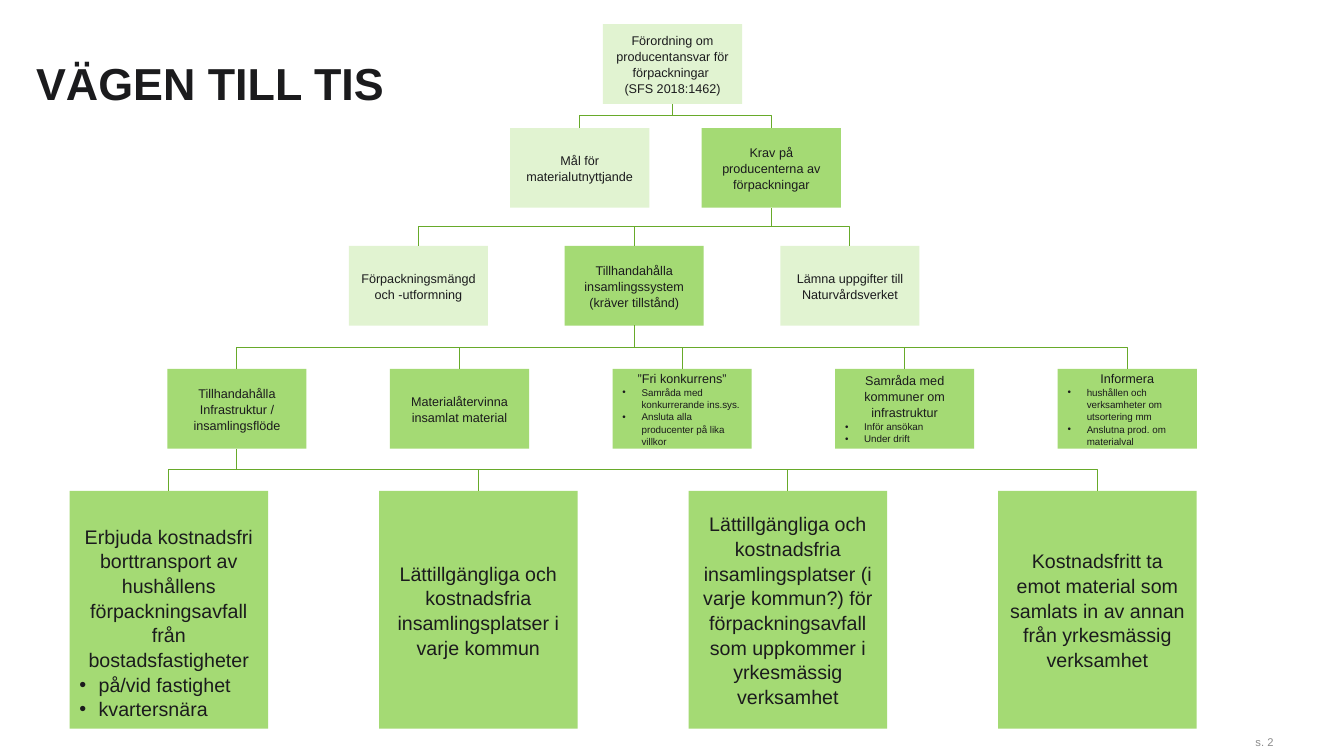
from lxml.etree import SubElement
from pptx import Presentation
from pptx.dml.color import RGBColor
from pptx.enum.shapes import MSO_CONNECTOR, MSO_SHAPE
from pptx.enum.text import MSO_ANCHOR, PP_ALIGN
from pptx.oxml.ns import qn
from pptx.util import Inches, Pt

COLORS = {
    "light": "E1F3D1",
    "green": "A4DA74",
    "line": "67AA2A",
    "text": "1B1B1D",
    "muted": "8C8C8C",
}
FONT = "Arial"
LINE_SPACING = 1.05
TOP, BOTTOM = 0, 2

SMALL = {"width": 1.38, "height": 0.79, "size": 9}
LARGE = {"width": 1.97, "height": 2.36, "size": 14}

LEVELS = [
    {"left": 5.98, "top": 0.24, "span": 1.38, "box": SMALL, "parent": None, "nodes": [
        ("light", ["Förordning om producentansvar för förpackningar \v(SFS 2018:1462)"], []),
    ]},
    {"left": 5.06, "top": 1.27, "span": 3.28, "box": SMALL, "parent": 0, "nodes": [
        ("light", ["Mål för materialutnyttjande"], []),
        ("green", ["Krav på producenterna av förpackningar"], []),
    ]},
    {"left": 3.46, "top": 2.44, "span": 5.66, "box": SMALL, "parent": 1, "nodes": [
        ("light", ["Förpackningsmängd och -utformning"], []),
        ("green", ["Tillhandahålla insamlingssystem", "(kräver tillstånd)"], []),
        ("light", ["Lämna uppgifter till Naturvårdsverket"], []),
    ]},
    {"left": 1.66, "top": 3.66, "span": 10.21, "box": SMALL, "parent": 1, "nodes": [
        ("green", ["Tillhandahålla Infrastruktur / insamlingsflöde"], []),
        ("green", ["Materialåtervinna insamlat material"], []),
        ("green", ["”Fri konkurrens”"],
         ["Samråda med konkurrerande ins.sys.", "Ansluta alla producenter på lika villkor"]),
        ("green", ["Samråda med kommuner om infrastruktur"], ["Inför ansökan", "Under drift"]),
        ("green", ["Informera"],
         ["hushållen och verksamheter om utsortering mm", "Anslutna prod. om materialval"]),
    ]},
    {"left": 0.69, "top": 4.87, "span": 11.18, "box": LARGE, "parent": 0, "nodes": [
        ("green", ["\vErbjuda kostnadsfri borttransport av hushållens förpackningsavfall "
                   "från bostadsfastigheter"], ["på/vid fastighet", "kvartersnära"]),
        ("green", ["Lättillgängliga och kostnadsfria insamlingsplatser i varje kommun"], []),
        ("green", ["Lättillgängliga och kostnadsfria insamlingsplatser (i varje kommun?) för "
                   "förpackningsavfall som uppkommer i yrkesmässig verksamhet"], []),
        ("green", ["Kostnadsfritt ta emot material som samlats in av annan från "
                   "yrkesmässig verksamhet"], []),
    ]},
]


def color(name):
    """Return the named colour."""
    return RGBColor.from_string(COLORS[name])


def style_font(paragraph, size, color_name, bold=False):
    """Set the font of a paragraph and its runs."""
    for font in [paragraph.font] + [run.font for run in paragraph.runs]:
        font.name = FONT
        font.size = Pt(size)
        font.bold = bold
        font.color.rgb = color(color_name)


def add_bullet(paragraph):
    """Give a paragraph a hanging bullet."""
    properties = paragraph._p.get_or_add_pPr()
    properties.set("marL", str(Inches(0.19)))
    properties.set("indent", str(-Inches(0.19)))
    SubElement(properties, qn("a:buFont")).set("typeface", FONT)
    SubElement(properties, qn("a:buChar")).set("char", "•")


def add_node(slide, left, top, box, node):
    """Draw one box of the tree with its heading and bullets."""
    fill, headings, bullets = node
    shape = slide.shapes.add_shape(MSO_SHAPE.RECTANGLE, Inches(left), Inches(top),
                                   Inches(box["width"]), Inches(box["height"]))
    shape.shadow.inherit = False
    shape.fill.solid()
    shape.fill.fore_color.rgb = color(fill)
    shape.line.fill.background()
    frame = shape.text_frame
    frame.word_wrap = True
    frame.vertical_anchor = MSO_ANCHOR.MIDDLE
    frame.text = "\n".join(headings + bullets)
    bullet_size = 7 if box is SMALL else box["size"]
    for index, paragraph in enumerate(frame.paragraphs):
        is_bullet = index >= len(headings)
        paragraph.alignment = PP_ALIGN.LEFT if is_bullet else PP_ALIGN.CENTER
        paragraph.line_spacing = LINE_SPACING
        if is_bullet:
            add_bullet(paragraph)
        style_font(paragraph, bullet_size if is_bullet else box["size"], "text")
    return shape


def add_branch(slide, child, parent):
    """Join the top of a child to the bottom of its parent with an elbow."""
    child_x = child.left + child.width // 2
    parent_x = parent.left + parent.width // 2
    parent_y = parent.top + parent.height
    drop, reach = child.top - parent_y, abs(child_x - parent_x)
    connector = slide.shapes.add_connector(MSO_CONNECTOR.ELBOW, child_x, child.top,
                                           parent_x, parent_y)
    connector.begin_connect(child, TOP)
    connector.end_connect(parent, BOTTOM)
    connector.left = (child_x + parent_x - drop) // 2
    connector.top = (child.top + parent_y - reach) // 2
    connector.width, connector.height = drop, reach
    on_left = child_x < parent_x
    properties = connector._element.spPr
    transform = properties.find(qn("a:xfrm"))
    transform.set("rot", str((90 if on_left else 270) * 60000))
    transform.set("flipH", "1" if on_left else "0")
    transform.set("flipV", "1")
    connector.line.color.rgb = color("line")
    connector.line.width = Pt(0.75)
    SubElement(properties, qn("a:effectLst"))


def add_level(slide, level, parents):
    """Spread one level's boxes evenly over its span and join them upwards."""
    box, nodes = level["box"], level["nodes"]
    pitch = (level["span"] - box["width"]) / max(len(nodes) - 1, 1)
    shapes = [add_node(slide, level["left"] + index * pitch, level["top"], box, node)
              for index, node in enumerate(nodes)]
    if level["parent"] is not None:
        for shape in shapes:
            add_branch(slide, shape, parents[level["parent"]])
    return shapes


def add_label(slide, box, text, size, color_name, alignment, anchor, bold=False):
    """Place one line of free text in the given box."""
    label = slide.shapes.add_textbox(*(Inches(length) for length in box))
    frame = label.text_frame
    frame.word_wrap = True
    frame.vertical_anchor = anchor
    frame.text = text
    paragraph = frame.paragraphs[0]
    paragraph.alignment = alignment
    style_font(paragraph, size, color_name, bold)


def main():
    """Build the slide and save it."""
    presentation = Presentation()
    presentation.slide_width = Inches(13.33)
    presentation.slide_height = Inches(7.5)
    slide = presentation.slides.add_slide(presentation.slide_layouts[6])
    add_label(slide, (0.26, 0.5, 4.29, 0.63), "VÄGEN TILL TIS", 32, "text",
              PP_ALIGN.LEFT, MSO_ANCHOR.TOP, bold=True)
    shapes = []
    for level in LEVELS:
        shapes = add_level(slide, level, shapes)
    add_label(slide, (11.3, 7.21, 1.43, 0.3), "s. 2", 8, "muted",
              PP_ALIGN.RIGHT, MSO_ANCHOR.MIDDLE)
    presentation.save("out.pptx")


if __name__ == "__main__":
    main()
